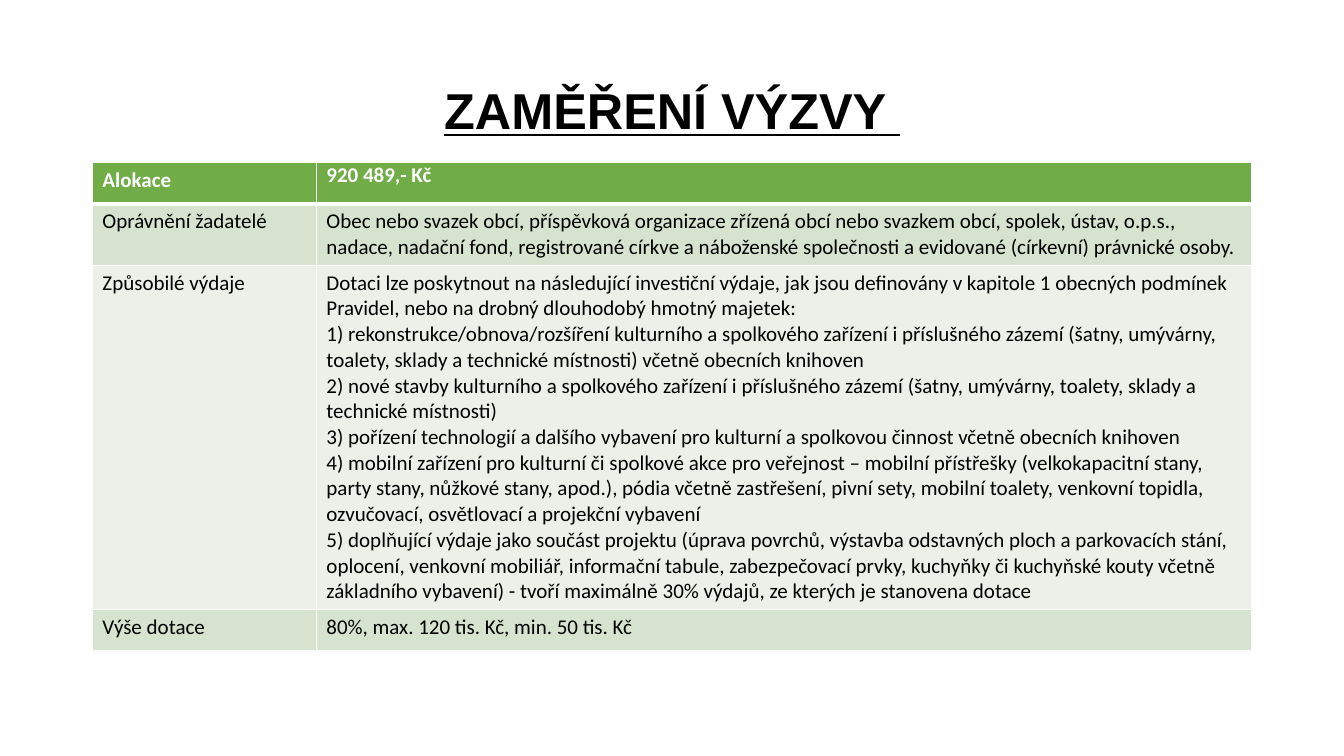
from lxml import etree
from pptx import Presentation
from pptx.dml.color import RGBColor
from pptx.enum.text import MSO_ANCHOR, PP_ALIGN
from pptx.oxml.ns import qn
from pptx.util import Pt

MIDDLE = MSO_ANCHOR.MIDDLE
TOP = MSO_ANCHOR.TOP
CENTER = PP_ALIGN.CENTER

BLACK = RGBColor(0x00, 0x00, 0x00)
WHITE = RGBColor(0xFF, 0xFF, 0xFF)
GREEN = RGBColor(0x70, 0xAD, 0x47)
BAND_DARK = RGBColor(0xD5, 0xE3, 0xCF)
BAND_LIGHT = RGBColor(0xEB, 0xF1, 0xE9)

TITLE_ONLY = 5
LEFT, WIDTH = 66, 828
COLUMN_WIDTHS = (160, 668)
ROW_HEIGHTS = (29.5, 43.8, 245, 29.5)

ROWS = (
    ("Alokace", "920 489,- Kč"),
    ("Oprávnění žadatelé",
     "Obec nebo svazek obcí, příspěvková organizace zřízená obcí nebo svazkem obcí, "
     "spolek, ústav, o.p.s., nadace, nadační fond, registrované církve a náboženské "
     "společnosti a evidované (církevní) právnické osoby."),
    ("Způsobilé výdaje", "\n".join((
        "Dotaci lze poskytnout na následující investiční výdaje, jak jsou definovány "
        "v kapitole 1 obecných podmínek Pravidel, nebo na drobný dlouhodobý hmotný majetek:",
        "1) rekonstrukce/obnova/rozšíření kulturního a spolkového zařízení i příslušného "
        "zázemí (šatny, umývárny, toalety, sklady a technické místnosti) včetně obecních "
        "knihoven",
        "2) nové stavby kulturního a spolkového zařízení i příslušného zázemí (šatny, "
        "umývárny, toalety, sklady a technické místnosti)",
        "3) pořízení technologií a dalšího vybavení pro kulturní a spolkovou činnost "
        "včetně obecních knihoven",
        "4) mobilní zařízení pro kulturní či spolkové akce pro veřejnost – mobilní "
        "přístřešky (velkokapacitní stany, party stany, nůžkové stany, apod.), pódia "
        "včetně zastřešení, pivní sety, mobilní toalety, venkovní topidla, ozvučovací, "
        "osvětlovací a projekční vybavení",
        "5) doplňující výdaje jako součást projektu (úprava povrchů, výstavba odstavných "
        "ploch a parkovacích stání, oplocení, venkovní mobiliář, informační tabule, "
        "zabezpečovací prvky, kuchyňky či kuchyňské kouty včetně základního vybavení) - "
        "tvoří maximálně 30% výdajů, ze kterých je stanovena dotace",
    ))),
    ("Výše dotace", "80%, max. 120 tis. Kč, min. 50 tis. Kč"),
)


class SlideBuilder:
    title_font = "Arial"
    table_font = "Calibri"

    def __init__(self, presentation):
        layout = presentation.slide_layouts[TITLE_ONLY]
        self.slide = presentation.slides.add_slide(layout)

    def style_text(self, paragraph, name, size, color, bold, underline=None):
        for run in paragraph.runs:
            font = run.font
            font.name = name
            font.size = Pt(size)
            font.bold = bold
            font.underline = underline
            font.color.rgb = color

    def title(self, text, left, top, width, height):
        shape = self.slide.shapes.title
        shape.left, shape.top = Pt(left), Pt(top)
        shape.width, shape.height = Pt(width), Pt(height)
        text_frame = shape.text_frame
        text_frame.text = text
        text_frame.word_wrap = True
        text_frame.vertical_anchor = MIDDLE
        paragraph = text_frame.paragraphs[0]
        paragraph.alignment = CENTER
        paragraph.line_spacing = 0.9
        self.style_text(paragraph, self.title_font, 36, BLACK, True, True)

    def borders(self, cell, widths):
        """Draw white cell edges; widths holds points by edge tag, in schema order."""
        properties = cell._tc.get_or_add_tcPr()
        for index, (tag, width) in enumerate(widths.items()):
            line = etree.Element(qn(f"a:{tag}"), w=str(Pt(width)))
            fill = etree.SubElement(line, qn("a:solidFill"))
            etree.SubElement(fill, qn("a:srgbClr"), val=str(WHITE))
            properties.insert(index, line)

    def cell(self, cell, text, fill, color, bold, edges):
        cell.text_frame.text = text
        cell.vertical_anchor = TOP
        cell.fill.solid()
        cell.fill.fore_color.rgb = fill
        for paragraph in cell.text_frame.paragraphs:
            self.style_text(paragraph, self.table_font, 15, color, bold)
        self.borders(cell, edges)

    def table(self, rows, left, top, column_widths, row_heights):
        frame = self.slide.shapes.add_table(
            len(rows), len(column_widths), Pt(left), Pt(top),
            Pt(sum(column_widths)), Pt(sum(row_heights)))
        table = frame.table
        for column, width in zip(table.columns, column_widths):
            column.width = Pt(width)
        for row, height in zip(table.rows, row_heights):
            row.height = Pt(height)
        for row_index, texts in enumerate(rows):
            header = row_index == 0
            band = BAND_DARK if row_index % 2 else BAND_LIGHT
            edges = {"lnL": 1, "lnR": 1,
                     "lnT": 3 if row_index == 1 else 1,
                     "lnB": 3 if header else 1}
            for column_index, text in enumerate(texts):
                self.cell(table.cell(row_index, column_index), text,
                          GREEN if header else band,
                          WHITE if header else BLACK, header, edges)
        return table


def main():
    presentation = Presentation()
    presentation.slide_width, presentation.slide_height = Pt(960), Pt(540)
    builder = SlideBuilder(presentation)
    builder.title("ZAMĚŘENÍ VÝZVY ", LEFT, 28.8, WIDTH, 104.4)
    table = builder.table(ROWS, LEFT, 116, COLUMN_WIDTHS, ROW_HEIGHTS)
    allocation = table.cell(0, 1)
    allocation.margin_top = allocation.margin_bottom = Pt(0)
    presentation.save("out.pptx")


if __name__ == "__main__":
    main()
